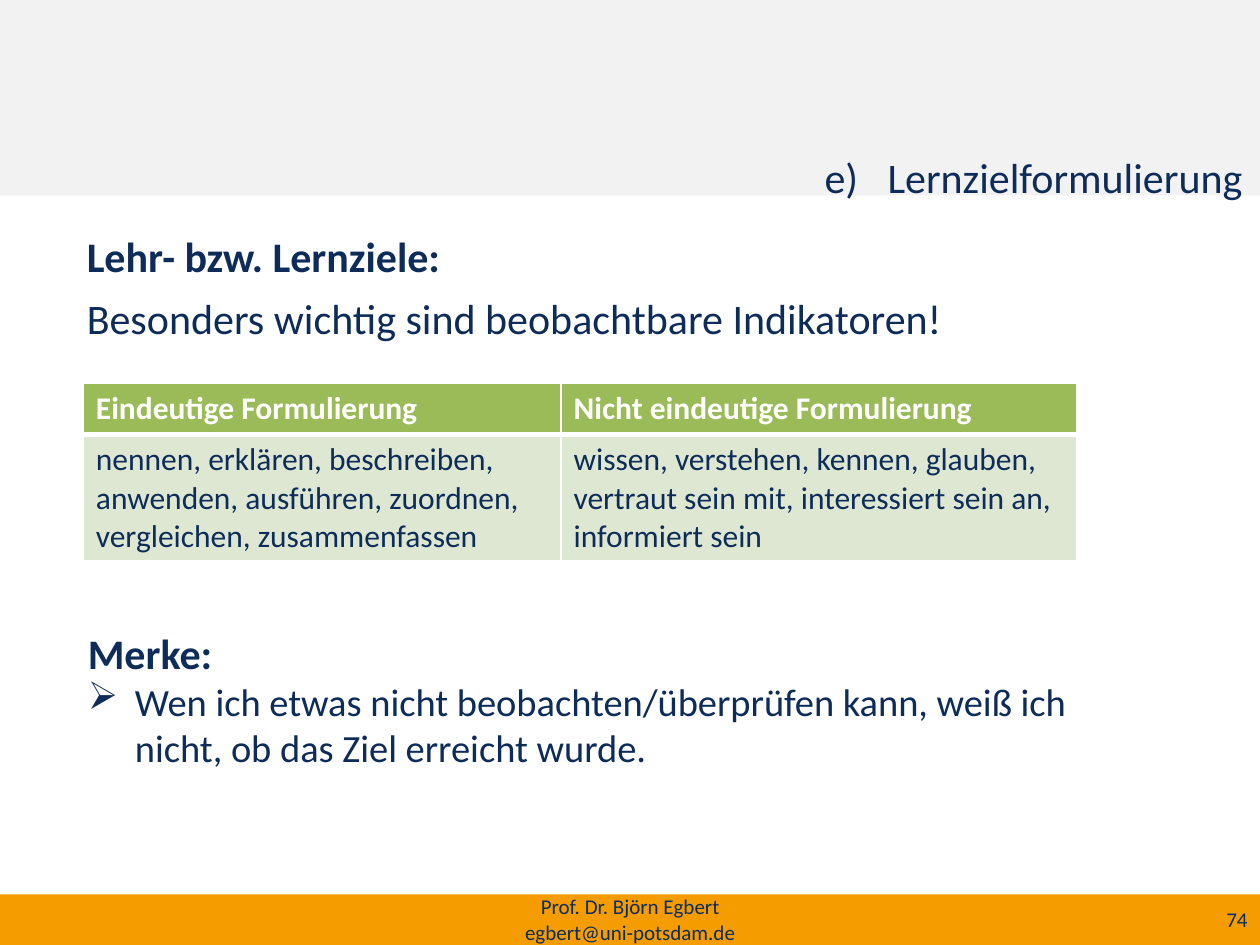
import pptx
import pptx.util
import pptx.dml.color
import pptx.enum.shapes
import pptx.enum.text
import pptx.oxml
import pptx.oxml.ns
import lxml.etree

Cm = pptx.util.Cm
Pt = pptx.util.Pt
Align = pptx.enum.text.PP_ALIGN
Anchor = pptx.enum.text.MSO_ANCHOR
NAVY, WHITE, GREY, ORANGE = "0D2C5A", "FFFFFF", "F2F2F2", "F59C00"
GREEN, PALE = "9BBB59", "DEE7D1"


def color(code):
    return pptx.dml.color.RGBColor.from_string(code)


def add_tag(parent, name, **attrs):
    return lxml.etree.SubElement(parent, pptx.oxml.ns.qn(name), attrs)


class Page:
    def __init__(self, deck, font):
        self.font = font
        self.slide = deck.slides.add_slide(deck.slide_layouts[6])

    def band(self, top, height, fill):
        shape = self.slide.shapes.add_shape(
            pptx.enum.shapes.MSO_SHAPE.RECTANGLE, 0, Cm(top), Cm(25.4), Cm(height))
        shape.shadow.inherit = False
        shape.fill.solid()
        shape.fill.fore_color.rgb = color(fill)
        shape.line.fill.background()

    def style(self, para, size, bold=False, ink=NAVY):
        font = para.font
        font.name, font.size, font.bold = self.font, Pt(size), bold
        font.color.rgb = color(ink)

    def text(self, left, top, width, height, words, size=24, bold=False,
             align=Align.LEFT, anchor=Anchor.TOP):
        box = self.slide.shapes.add_textbox(Cm(left), Cm(top), Cm(width), Cm(height))
        frame = box.text_frame
        frame.word_wrap = True
        frame.vertical_anchor = anchor
        para = frame.paragraphs[0]
        para.text = words
        para.alignment = align
        self.style(para, size, bold)
        return frame

    def bullet(self, para, indent, size, name, **attrs):
        props = para._p.get_or_add_pPr()
        props.set("marL", str(Cm(indent)))
        props.set("indent", str(-Cm(indent)))
        for child in list(props):
            props.remove(child)
        add_tag(props, name, **attrs)
        self.style(para, size)

    def border(self, cell, head):
        props = cell._tc.get_or_add_tcPr()
        thick = "a:lnB" if head else "a:lnT"
        for side in ("a:lnL", "a:lnR", "a:lnT", "a:lnB"):
            line = add_tag(props, side, w=str(Pt(3 if side == thick else 1)))
            add_tag(add_tag(line, "a:solidFill"), "a:srgbClr", val=WHITE)

    def table(self, left, top, widths, heights, rows):
        grid = self.slide.shapes.add_table(
            len(rows), len(widths), Cm(left), Cm(top),
            Cm(sum(widths)), Cm(sum(heights))).table
        for col, width in zip(grid.columns, widths):
            col.width = Cm(width)
        for i, (row, height) in enumerate(zip(rows, heights)):
            grid.rows[i].height = Cm(height)
            head = i == 0
            for j, words in enumerate(row):
                cell = grid.cell(i, j)
                cell.text = words
                self.border(cell, head)
                cell.fill.solid()
                cell.fill.fore_color.rgb = color(GREEN if head else PALE)
                self.style(cell.text_frame.paragraphs[0], 18, head,
                           WHITE if head else NAVY)


def main():
    deck = pptx.Presentation()
    deck.slide_width, deck.slide_height = Cm(25.4), Cm(19.05)
    page = Page(deck, "Calibri")

    page.band(0, 3.94, GREY)
    page.band(18.03, 1.02, ORANGE)

    page.text(1.5, 5.78, 22.15, 1.6, "Besonders wichtig sind beobachtbare Indikatoren!")
    page.text(19.3, 18.01, 6.1, 1.02, "74", 12, align=Align.RIGHT, anchor=Anchor.MIDDLE)
    page.text(8.41, 18.01, 8.59, 1.04, "Prof. Dr. Björn Egbert\vegbert@uni-potsdam.de",
              12, align=Align.CENTER, anchor=Anchor.MIDDLE)

    page.table(1.68, 7.72, [9.63, 10.39], [1.04, 2.54], [
        ["Eindeutige Formulierung", "Nicht eindeutige Formulierung"],
        ["nennen, erklären, beschreiben, anwenden, ausführen, zuordnen, "
         "vergleichen, zusammenfassen",
         "wissen, verstehen, kennen, glauben, vertraut sein mit, "
         "interessiert sein an, informiert sein"]])

    note = page.text(1.52, 12.52, 21.9, 3.18, "Merke:", bold=True)
    rule = note.add_paragraph()
    rule.text = ("Wen ich etwas nicht beobachten/überprüfen kann, weiß ich nicht, "
                 "ob das Ziel erreicht wurde.")
    page.bullet(rule, 0.95, 22, "a:buChar", char="➢")

    page.text(1.5, 4.52, 21.9, 1.6, "Lehr- bzw. Lernziele:", bold=True)
    topic = page.text(3.4, 2.92, 21.9, 1.6, "Lernzielformulierung", align=Align.RIGHT)
    page.bullet(topic.paragraphs[0], 1.27, 24, "a:buAutoNum",
                type="alphaLcParenR", startAt="5")

    deck.save("out.pptx")


if __name__ == "__main__":
    main()
